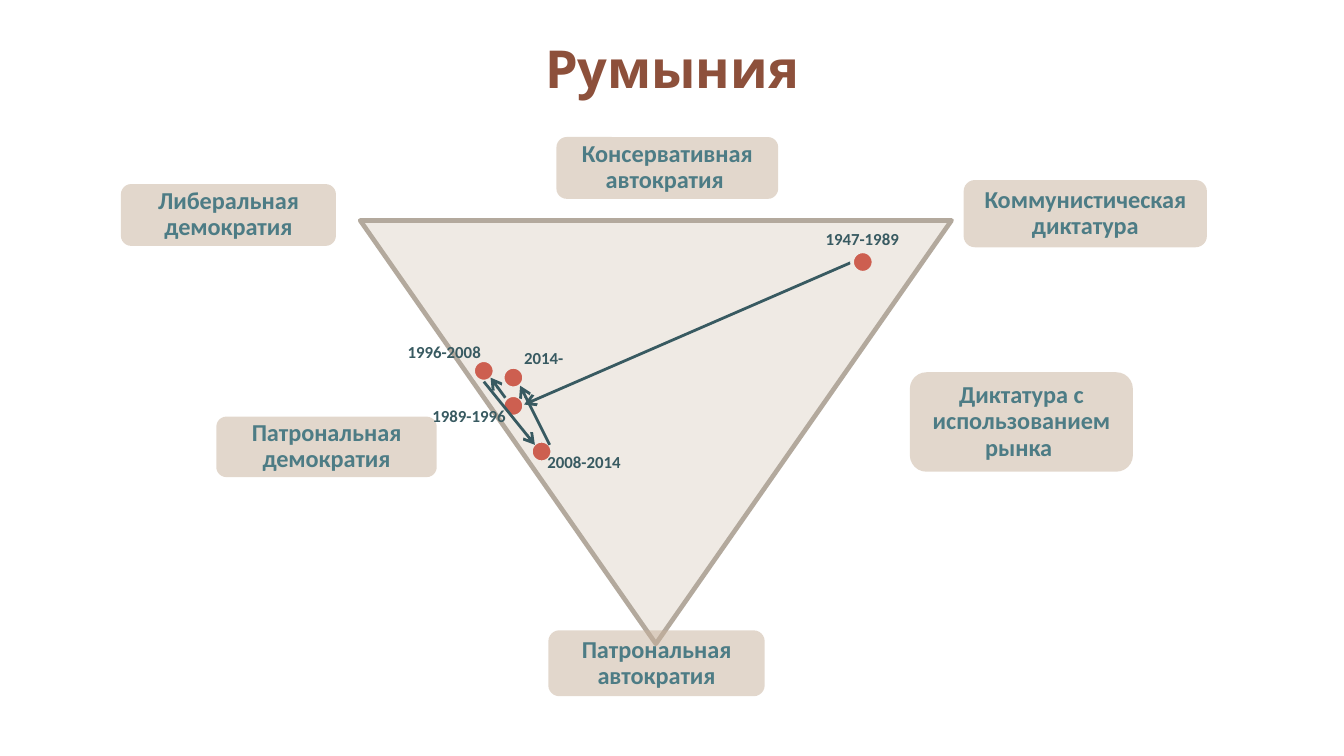
from pptx import Presentation
from pptx.dml.color import RGBColor
from pptx.enum.shapes import MSO_CONNECTOR as Connector, MSO_SHAPE as Shape
from pptx.enum.text import MSO_ANCHOR as Anchor, MSO_AUTO_SIZE as AutoSize, PP_ALIGN as Align
from pptx.oxml.ns import qn
from pptx.util import Pt
from lxml.etree import SubElement

EMU_PER_PX = 9144  # 100 px to the inch
SLIDE_WIDTH = 1000
DOT_SIZE = 16
COLORS = {
    "title": "8D503B",
    "triangle": "EFEAE4",
    "triangle_line": "B3A99D",
    "regime": "C7B09A",
    "regime_text": "4D7C85",
    "dot": "CD5F50",
    "path": "385A61",
}

REGIMES = [
    ("Коммунистическая диктатура", 717, 134, 181, 50),
    ("Либеральная демократия", 90, 137, 160, 46),
    ("Патрональная автократия", 408, 469, 161, 49),
    ("Консервативная автократия ", 414, 102, 165, 46),
    ("Диктатура с использованием рынка ", 677, 277, 166, 74),
    ("Патрональная демократия", 161, 310, 164, 45),
]
PERIODS = [
    ("1947-1989", 602, 165, 79),
    ("1989-1996", 311, 297, 76),
    ("1996-2008", 291, 249, 79),
    ("2008-2014", 395, 331, 79),
]


def px(*lengths):
    return [round(length * EMU_PER_PX) for length in lengths]


def color(name):
    return RGBColor.from_string(COLORS[name])


def write(shape, text, *, size, fill, font="Calibri", align=Align.CENTER,
          anchor=Anchor.TOP, line_spacing=None, inset=None, fit=AutoSize.NONE):
    frame = shape.text_frame
    frame.word_wrap = True
    frame.auto_size = fit
    frame.vertical_anchor = anchor
    if inset is not None:
        margin = px(inset)[0]
        frame.margin_left = frame.margin_right = margin
        frame.margin_top = frame.margin_bottom = margin
    paragraph = frame.paragraphs[0]
    paragraph.alignment = align
    paragraph.line_spacing = line_spacing
    run = paragraph.add_run()
    run.text = text
    run.font.name = font
    run.font.size = Pt(size)
    run.font.bold = True
    run.font.color.rgb = color(fill)


class Diagram:
    def __init__(self, slide):
        self.slide = slide

    def title(self, text, *box):
        shape = self.slide.shapes.title
        shape.left, shape.top, shape.width, shape.height = px(*box)
        write(shape, text, size=28, fill="title", font="Open Sans", anchor=Anchor.MIDDLE)

    def shape(self, kind, box, fill, line=None, line_width=0):
        shape = self.slide.shapes.add_shape(kind, *px(*box))
        shape.shadow.inherit = False
        shape.fill.solid()
        shape.fill.fore_color.rgb = color(fill)
        if line:
            shape.line.color.rgb = color(line)
            shape.line.width = Pt(line_width)
        else:
            shape.line.fill.background()
        return shape

    def triangle(self, *box):
        shape = self.shape(Shape.ISOSCELES_TRIANGLE, box, "triangle", "triangle_line", 2.5)
        shape.rotation = 180

    def regime(self, text, *box):
        """Half-transparent rounded box naming a regime type."""
        shape = self.shape(Shape.ROUNDED_RECTANGLE, box, "regime")
        fill_color = shape._element.spPr.find(qn("a:solidFill"))[0]
        SubElement(fill_color, qn("a:alpha"), val="50000")
        write(shape, text, size=13, fill="regime_text", anchor=Anchor.MIDDLE,
              line_spacing=0.9, inset=5)

    def period(self, text, left, top, width):
        shape = self.slide.shapes.add_textbox(*px(left, top, width, 25))
        write(shape, text, size=9, fill="path", fit=AutoSize.SHAPE_TO_FIT_TEXT)

    def open_period(self, text, *box):
        """Label of the current period, on a patch of the triangle's colour."""
        shape = self.shape(Shape.RECTANGLE, box, "triangle")
        write(shape, text, size=9, fill="path", align=Align.RIGHT,
              fit=AutoSize.SHAPE_TO_FIT_TEXT)

    def dot(self, left, top):
        self.shape(Shape.OVAL, (left, top, DOT_SIZE, DOT_SIZE), "dot", "triangle", 2)

    def arrow(self, *ends):
        connector = self.slide.shapes.add_connector(Connector.STRAIGHT, *px(*ends))
        connector.line.color.rgb = color("path")
        connector.line.width = Pt(1.5)
        properties = connector._element.spPr
        SubElement(properties.find(qn("a:ln")), qn("a:tailEnd"), type="arrow")
        SubElement(properties, qn("a:effectLst"))


def main():
    presentation = Presentation()
    presentation.slide_width, presentation.slide_height = px(SLIDE_WIDTH, SLIDE_WIDTH * 9 / 16)
    slide = presentation.slides.add_slide(presentation.slide_layouts[5])
    diagram = Diagram(slide)

    diagram.triangle(268, 164, 440, 315)
    for regime in REGIMES:
        diagram.regime(*regime)
    diagram.title("Румыния", 12, 0, 976, 100)

    for position in [(374, 294), (352, 268), (395, 328)]:
        diagram.dot(*position)
    for ends in [(634, 195, 390, 301), (360, 284, 398, 331)]:
        diagram.arrow(*ends)

    for period in PERIODS:
        diagram.period(*period)
    diagram.open_period("2014-", 379, 254, 50, 25)

    for position in [(374, 273), (634, 187)]:
        diagram.dot(*position)
    for ends in [(409, 331, 387, 287), (376, 296, 365, 281)]:
        diagram.arrow(*ends)

    presentation.save("out.pptx")


if __name__ == "__main__":
    main()
